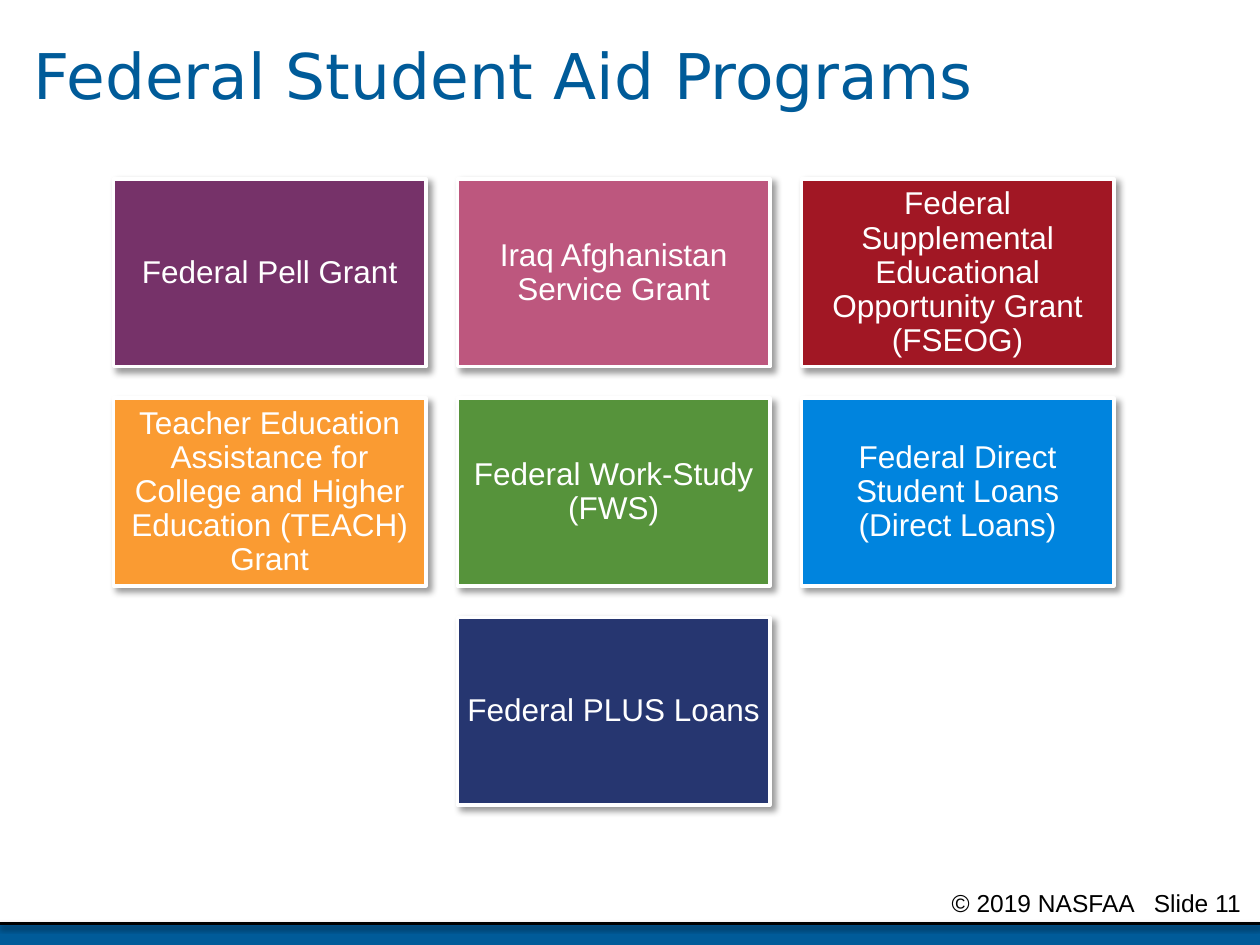
"""Build a slide of federal student aid programs as a grid of coloured tiles."""
from typing import NamedTuple

import pptx
import pptx.dml.color
import pptx.enum.shapes
import pptx.enum.text
import pptx.oxml
import pptx.oxml.ns
import pptx.util

Inches = pptx.util.Inches
Pt = pptx.util.Pt
Align = pptx.enum.text.PP_ALIGN
Anchor = pptx.enum.text.MSO_ANCHOR
RECT = pptx.enum.shapes.MSO_SHAPE.RECTANGLE


class Tile(NamedTuple):
    text: str
    fill: str
    col: int
    row: int


TILES = [
    Tile("Federal Pell Grant", "763269", 0, 0),
    Tile("Iraq Afghanistan Service Grant", "BD577E", 1, 0),
    Tile("Federal Supplemental Educational Opportunity Grant (FSEOG)", "A11724", 2, 0),
    Tile("Teacher Education Assistance for College and Higher Education (TEACH) Grant",
         "FA9B32", 0, 1),
    Tile("Federal Work-Study (FWS)", "56933B", 1, 1),
    Tile("Federal Direct Student Loans (Direct Loans)", "0084DE", 2, 1),
    Tile("Federal PLUS Loans", "263670", 1, 2),
]
LEFT, TOP = 0.9, 1.42
WIDE, HIGH = 2.48, 1.49
GAP = 0.25


def color(code: str) -> pptx.dml.color.RGBColor:
    return pptx.dml.color.RGBColor.from_string(code)


def shade(shape, alpha: int, blur: float, dist: float, angle: int) -> None:
    shape._element.spPr.append(pptx.oxml.parse_xml(
        f'<a:effectLst {pptx.oxml.ns.nsdecls("a")}>'
        f'<a:outerShdw blurRad="{Pt(blur)}" dist="{Pt(dist)}" dir="{angle * 60000}"'
        ' algn="ctr" rotWithShape="0"><a:srgbClr val="000000">'
        f'<a:alpha val="{alpha * 1000}"/></a:srgbClr></a:outerShdw></a:effectLst>'))


def write(shape, text: str, *, size: float, ink: str, font: str = "Arial",
          align=Align.LEFT, anchor=Anchor.MIDDLE, space: float = 1.0,
          pad: tuple = (0.1, 0.05, 0.1, 0.05)) -> None:
    frame = shape.text_frame
    frame.word_wrap = True
    frame.vertical_anchor = anchor
    (frame.margin_left, frame.margin_top,
     frame.margin_right, frame.margin_bottom) = map(Inches, pad)
    para = frame.paragraphs[0]
    para.text = text
    para.alignment = align
    para.line_spacing = space
    para.font.name = font
    para.font.size = Pt(size)
    para.font.color.rgb = color(ink)


def block(slide, x: float, y: float, wide: float, high: float, fill: str):
    shape = slide.shapes.add_shape(RECT, Inches(x), Inches(y), Inches(wide), Inches(high))
    shape.fill.solid()
    shape.fill.fore_color.rgb = color(fill)
    return shape


def draw(slide, tile: Tile) -> None:
    x = LEFT + tile.col * (WIDE + GAP)
    y = TOP + tile.row * (HIGH + GAP)
    shape = block(slide, x, y, WIDE, HIGH, tile.fill)
    shape.line.color.rgb = color("FFFFFF")
    shape.line.width = Pt(2)
    shade(shape, 40, 4, 3, 45)
    write(shape, tile.text, size=18, ink="FFFFFF", align=Align.CENTER,
          space=0.9, pad=(0.07,) * 4)


def foot(slide) -> None:
    bar = block(slide, 0, 7.33, 10, 0.17, "005B99")
    bar.line.fill.background()
    bar.shadow.inherit = False
    rule = slide.shapes.add_connector(
        pptx.enum.shapes.MSO_CONNECTOR.STRAIGHT,
        Inches(0), Inches(7.33), Inches(10), Inches(7.33))
    rule.line.color.rgb = color("000000")
    rule.line.width = Pt(2)
    shade(rule, 38, 3.1, 1.6, 90)
    note = slide.shapes.add_textbox(Inches(6.25), Inches(7), Inches(3.75), Inches(0.25))
    write(note, "© 2019 NASFAA   Slide 11", size=14, ink="000000", align=Align.RIGHT,
          anchor=Anchor.TOP, pad=(0.1, 0.05, 0.15, 0.05))


def main() -> None:
    deck = pptx.Presentation()
    deck.slide_width, deck.slide_height = Inches(10), Inches(7.5)
    slide = deck.slides.add_slide(deck.slide_layouts[6])
    foot(slide)
    title = slide.shapes.add_textbox(Inches(0.17), Inches(0), Inches(9.67), Inches(1.25))
    write(title, "Federal Student Aid Programs", size=36, ink="005B99",
          font="DejaVu Sans", space=0.9)
    for tile in TILES:
        draw(slide, tile)
    deck.save("out.pptx")


if __name__ == "__main__":
    main()
